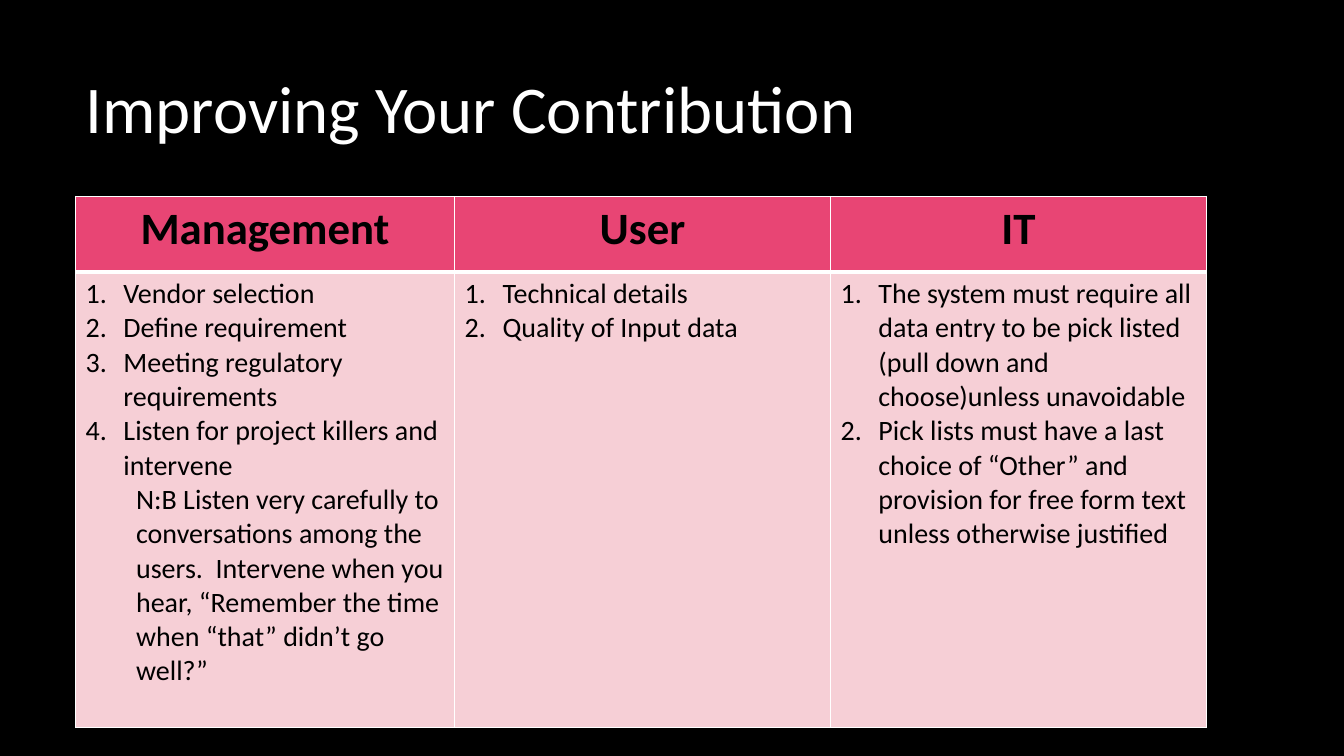
from pptx import Presentation
from pptx.dml.color import RGBColor
from pptx.enum.text import MSO_ANCHOR, MSO_AUTO_SIZE, PP_ALIGN
from pptx.oxml.ns import qn
from pptx.util import Pt
from lxml.etree import SubElement

PX = 9525
COLORS = {
    "background": "000000",
    "title": "FFFFFF",
    "text": "000000",
    "header": "E84574",
    "body": "F6CFD6",
    "border": "FFFFFF",
}
TITLE = {"size": Pt(47.7), "name": "Calibri", "bold": False}
HEADER = {"size": Pt(32), "name": "Calibri", "bold": True}
BODY = {"size": Pt(20), "name": "Calibri", "bold": False}
COLUMN_WIDTHS = [361, 358, 358]
ROW_HEIGHTS = [72, 434]
NUMBER_INDENT = 36
NOTE_INDENT = 48
CONTRIBUTIONS = {
    "Management": [
        "Vendor selection",
        "Define requirement",
        "Meeting regulatory requirements",
        "Listen for project killers and intervene",
    ],
    "User": ["Technical details", "Quality of Input data"],
    "IT": [
        "The system must require all data entry to be pick listed "
        "(pull down and choose)unless unavoidable",
        "Pick lists must have a last choice of “Other” and provision for "
        "free form text unless otherwise justified",
    ],
}
MANAGEMENT_NOTE = (
    "N:B Listen very carefully to conversations among the users.  Intervene "
    "when you hear, “Remember the time when “that” didn’t go well?”"
)


def color(name):
    return RGBColor.from_string(COLORS[name])


def format_font(para, values, color_name):
    for name, value in values.items():
        setattr(para.font, name, value)
    para.font.color.rgb = color(color_name)


def indent(para, left, hanging=0):
    properties = para._p.get_or_add_pPr()
    properties.set("marL", str(left * PX))
    properties.set("indent", str(-hanging * PX))
    return properties


def style_cell(cell, fill, borders):
    """Set the fill and the borders, given as points by side."""
    properties = cell._tc.get_or_add_tcPr()
    for side, points in borders.items():
        line = SubElement(properties, qn(f"a:ln{side}"), w=str(Pt(points)))
        paint = SubElement(line, qn("a:solidFill"))
        SubElement(paint, qn("a:srgbClr"), val=COLORS["border"])
    cell.fill.solid()
    cell.fill.fore_color.rgb = color(fill)


def add_title(page, text):
    title = page.shapes.title
    title.left, title.top, title.width, title.height = (
        value * PX for value in (72, 64, 1064, 117)
    )
    frame = title.text_frame
    frame.text = text
    frame.auto_size = MSO_AUTO_SIZE.NONE
    frame.vertical_anchor = MSO_ANCHOR.TOP
    frame.margin_top = 0
    para = frame.paragraphs[0]
    para.alignment = PP_ALIGN.LEFT
    format_font(para, TITLE, "title")


def fill_header(cell, text):
    style_cell(cell, "header", {"L": 1, "R": 1, "T": 1, "B": 3})
    cell.text = text
    para = cell.text_frame.paragraphs[0]
    para.alignment = PP_ALIGN.CENTER
    format_font(para, HEADER, "text")


def fill_numbered_list(cell, items):
    style_cell(cell, "body", {"L": 1, "R": 1, "T": 3, "B": 1})
    cell.text = "\n".join(items)
    for para in cell.text_frame.paragraphs:
        properties = indent(para, NUMBER_INDENT, NUMBER_INDENT)
        SubElement(properties, qn("a:buFont"), typeface="+mj-lt")
        SubElement(properties, qn("a:buAutoNum"), type="arabicPeriod")
        format_font(para, BODY, "text")


def add_note(cell, text):
    para = cell.text_frame.add_paragraph()
    para.text = text
    para.level = 1
    indent(para, NOTE_INDENT)
    format_font(para, BODY, "text")


def add_contribution_table(page):
    table = page.shapes.add_table(
        len(ROW_HEIGHTS), len(COLUMN_WIDTHS), 72 * PX, 187 * PX,
        sum(COLUMN_WIDTHS) * PX, sum(ROW_HEIGHTS) * PX,
    ).table
    table.horz_banding = False
    for row, height in zip(table.rows, ROW_HEIGHTS):
        row.height = height * PX
    for index, (role, items) in enumerate(CONTRIBUTIONS.items()):
        table.columns[index].width = COLUMN_WIDTHS[index] * PX
        fill_header(table.cell(0, index), role)
        fill_numbered_list(table.cell(1, index), items)
    add_note(table.cell(1, 0), MANAGEMENT_NOTE)


def main():
    deck = Presentation()
    deck.slide_width, deck.slide_height = 1280 * PX, 720 * PX
    page = deck.slides.add_slide(deck.slide_layouts[5])
    page.background.fill.solid()
    page.background.fill.fore_color.rgb = color("background")
    add_title(page, "Improving Your Contribution")
    add_contribution_table(page)
    deck.save("out.pptx")


if __name__ == "__main__":
    main()
